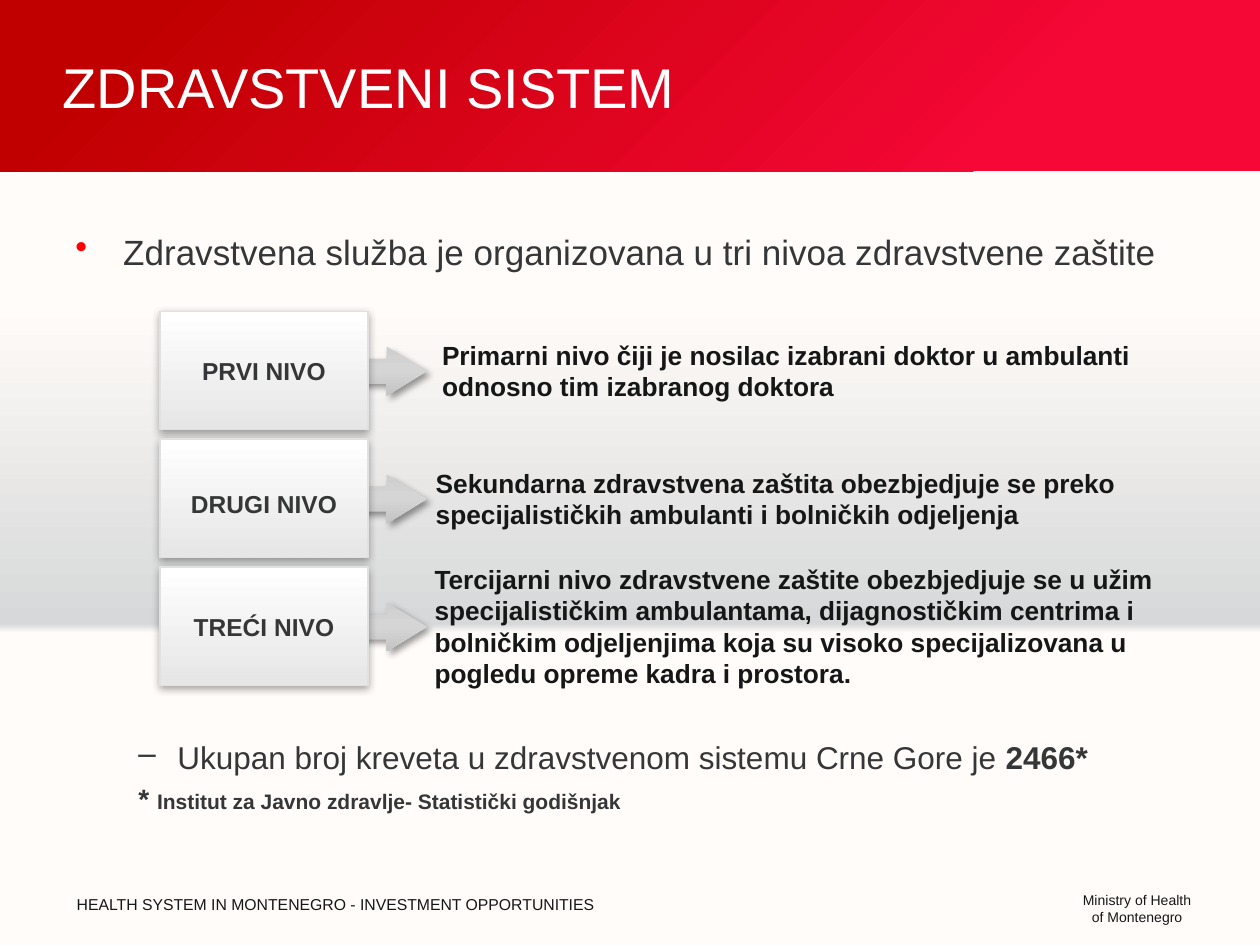
from lxml import etree
from pptx import Presentation
from pptx import util as u
from pptx.dml.color import RGBColor
from pptx.enum import shapes, text
from pptx.oxml.ns import qn

COLS, ROWS = 100, 75  # slide grid; every box is (column, row, columns, rows)
CELL = u.Inches(0.1)
DARK, GREY, WHITE = "151616", "353637", "FFFFFF"
LEFT, CENTER = text.PP_ALIGN.LEFT, text.PP_ALIGN.CENTER
TOP, MIDDLE = text.MSO_ANCHOR.TOP, text.MSO_ANCHOR.MIDDLE


def color(value):
    return RGBColor.from_string(value)


def grid(box):
    return [round(cells * CELL) for cells in box]


def add_color(parent, value, alpha=100):
    node = etree.SubElement(parent, qn("a:srgbClr"), val=value)
    if alpha < 100:
        etree.SubElement(node, qn("a:alpha"), val=str(alpha * 1000))


def set_gradient(fill, owner, stops, angle):
    """Stops are (percent, colour[, opacity]); the angle runs clockwise."""
    fill.solid()
    gradient = etree.Element(qn("a:gradFill"), rotWithShape="1")
    stop_list = etree.SubElement(gradient, qn("a:gsLst"))
    for position, *paint in stops:
        stop = etree.SubElement(stop_list, qn("a:gs"), pos=str(position * 1000))
        add_color(stop, *paint)
    etree.SubElement(gradient, qn("a:lin"), ang=str(angle * 60000), scaled="0")
    solid = owner.find(qn("a:solidFill"))
    owner.replace(solid, gradient)


def add_shadow(shape, alpha, blur, distance, angle):
    effects = shape._element.spPr.find(qn("a:effectLst"))
    shadow = etree.SubElement(
        effects, qn("a:outerShdw"), blurRad=str(u.Pt(blur)), dist=str(u.Pt(distance)),
        dir=str(angle * 60000), algn="ctr", rotWithShape="0")
    add_color(shadow, "000000", alpha)


def add_panel(slide, kind, box, stops, angle):
    panel = slide.shapes.add_shape(kind, *grid(box))
    panel.shadow.inherit = False
    panel.line.fill.background()
    set_gradient(panel.fill, panel._element.spPr, stops, angle)
    return panel


def set_bullet(paragraph, mark, indent, hanging, mark_color=None):
    props = paragraph._p.get_or_add_pPr()
    props.set("marL", str(u.Inches(indent)))
    props.set("indent", str(-u.Inches(hanging)))
    if mark_color:
        add_color(etree.SubElement(props, qn("a:buClr")), mark_color)
    if mark:
        etree.SubElement(props, qn("a:buChar"), char=mark)
    else:
        etree.SubElement(props, qn("a:buNone"))


def write(paragraph, words, size, ink=DARK, bold=False, align=LEFT):
    paragraph.alignment = align
    run = paragraph.add_run()
    run.text = words
    run.font.name = "Arial"
    run.font.size = u.Pt(size)
    run.font.bold = bold
    run.font.color.rgb = color(ink)


def add_frame(slide, box, anchor=TOP):
    frame = slide.shapes.add_textbox(*grid(box)).text_frame
    frame.word_wrap = True
    frame.vertical_anchor = anchor
    return frame


def add_text(slide, box, *lines, anchor=TOP, **style):
    frame = add_frame(slide, box, anchor)
    for index, line in enumerate(lines):
        paragraph = frame.add_paragraph() if index else frame.paragraphs[0]
        write(paragraph, line, **style)


def add_background(slide):
    slide.background.fill.solid()
    owner = slide._element.find(".//" + qn("p:bgPr"))
    stops = [(33, "FFFCF9"), (34, "D7D8D9", 49), (68, "FFFCF9")]
    set_gradient(slide.background.fill, owner, stops, 270)


def add_header(slide, box, title):
    left, top, width, height = box
    stops = [(11, "F50736"), (20, "F50736"), (89, "C00000")]
    add_panel(slide, shapes.MSO_SHAPE.RECTANGLE, box, stops, 225)
    add_text(slide, (left + 4, top + 1.1, width - 23.3, height - 2.1), title,
             anchor=MIDDLE, size=32, ink=WHITE)


def add_footer(slide, box, topic, publisher):
    left, top, width, height = box
    add_text(slide, (left, top + 0.2, width - 1.6, height - 1.2), topic, size=9)
    add_text(slide, (left + width - 13.9, top, 13.9, height), *publisher,
             size=8, align=CENTER)


def add_intro(slide, box, sentence):
    paragraph = add_frame(slide, box).paragraphs[0]
    set_bullet(paragraph, "•", 0.38, 0.38, "FF0000")
    write(paragraph, sentence, 20, GREY)


def add_beds(slide, box, sentence, total, source):
    frame = add_frame(slide, box)
    beds, note = frame.paragraphs[0], frame.add_paragraph()
    set_bullet(beds, "–", 0.31, 0.31)
    write(beds, sentence, 18, GREY)
    write(beds, total, 18, GREY, bold=True)
    set_bullet(note, None, 0.31, 0.31)
    note.space_before = u.Pt(3.2)
    write(note, "* ", 16, GREY, bold=True)
    write(note, source, 12, GREY, bold=True)


def add_level(slide, box, label, description, lines, text_shift, label_drop):
    left, top, width, height = box
    middle = top + height / 2
    card_width = 16.5
    text_left, text_height = left + 20.8 + text_shift, lines * 2.5 + 1.1
    add_text(slide, (text_left, middle - text_height / 2, width - 20.8, text_height),
             description, anchor=MIDDLE, size=15, bold=True)

    arrow = add_panel(slide, shapes.MSO_SHAPE.RIGHT_ARROW,
                      (left + card_width - 0.6, middle - 1.9, 5.3, 3.9),
                      [(0, "CFCFCF"), (50, "D5D5D5"), (100, "C4C4C4")], 90)
    arrow.adjustments[0], arrow.adjustments[1] = 0.5, 0.82
    add_shadow(arrow, 40, 4, 3, 45)

    card = add_panel(slide, shapes.MSO_SHAPE.RECTANGLE, (left, top, card_width, height),
                     [(0, "E6E6E6"), (100, "FFFFFF")], 270)
    card.line.color.rgb = color("E1E1E1")
    card.line.width = u.Pt(0.75)
    add_shadow(card, 35, 5, 1.8, 90)
    frame = card.text_frame
    frame.vertical_anchor = MIDDLE
    frame.margin_top += round(2 * label_drop * CELL)
    write(frame.paragraphs[0], label, 14, GREY, bold=True, align=CENTER)


def add_levels(slide, box, levels, gap=0.75):
    left, top, width, height = box
    row = (height - gap * (len(levels) - 1)) / len(levels)
    for index, level in enumerate(levels):
        add_level(slide, (left, top + index * (row + gap), width, row), *level)


LEVELS = [
    ("PRVI NIVO", "Primarni nivo čiji je nosilac izabrani doktor u ambulanti "
     "odnosno tim izabranog doktora", 2, 0.6, 0),
    ("DRUGI NIVO", "Sekundarna zdravstvena zaštita obezbjedjuje se preko "
     "specijalističkih ambulanti i bolničkih odjeljenja", 2, 0.1, 0.45),
    ("TREĆI NIVO", "Tercijarni nivo zdravstvene zaštite obezbjedjuje se u užim "
     "specijalističkim ambulantama, dijagnostičkim centrima i bolničkim "
     "odjeljenjima koja su visoko specijalizovana u pogledu opreme kadra i "
     "prostora.", 4, 0, 0),
]


def main():
    deck = Presentation()
    deck.slide_width, deck.slide_height = COLS * CELL, ROWS * CELL
    slide = deck.slides.add_slide(deck.slide_layouts[6])
    add_background(slide)
    add_header(slide, (0, 0, COLS, 13.6), "ZDRAVSTVENI SISTEM")
    add_footer(slide, (5.1, 70.3, 92.1, 3.7),
               "HEALTH SYSTEM IN MONTENEGRO - INVESTMENT OPPORTUNITIES",
               ("Ministry of Health", "of Montenegro"))
    add_intro(slide, (5, 17.8, 89, 4.5),
              "Zdravstvena služba je organizovana u tri nivoa zdravstvene zaštite")
    add_levels(slide, (12.7, 24.7, 79.9, 29.7), LEVELS)
    add_beds(slide, (10, 58.1, 84, 7.4),
             "Ukupan broj kreveta u zdravstvenom sistemu Crne Gore je ", "2466*",
             "Institut za Javno zdravlje- Statistički godišnjak")
    deck.save("out.pptx")


if __name__ == "__main__":
    main()
